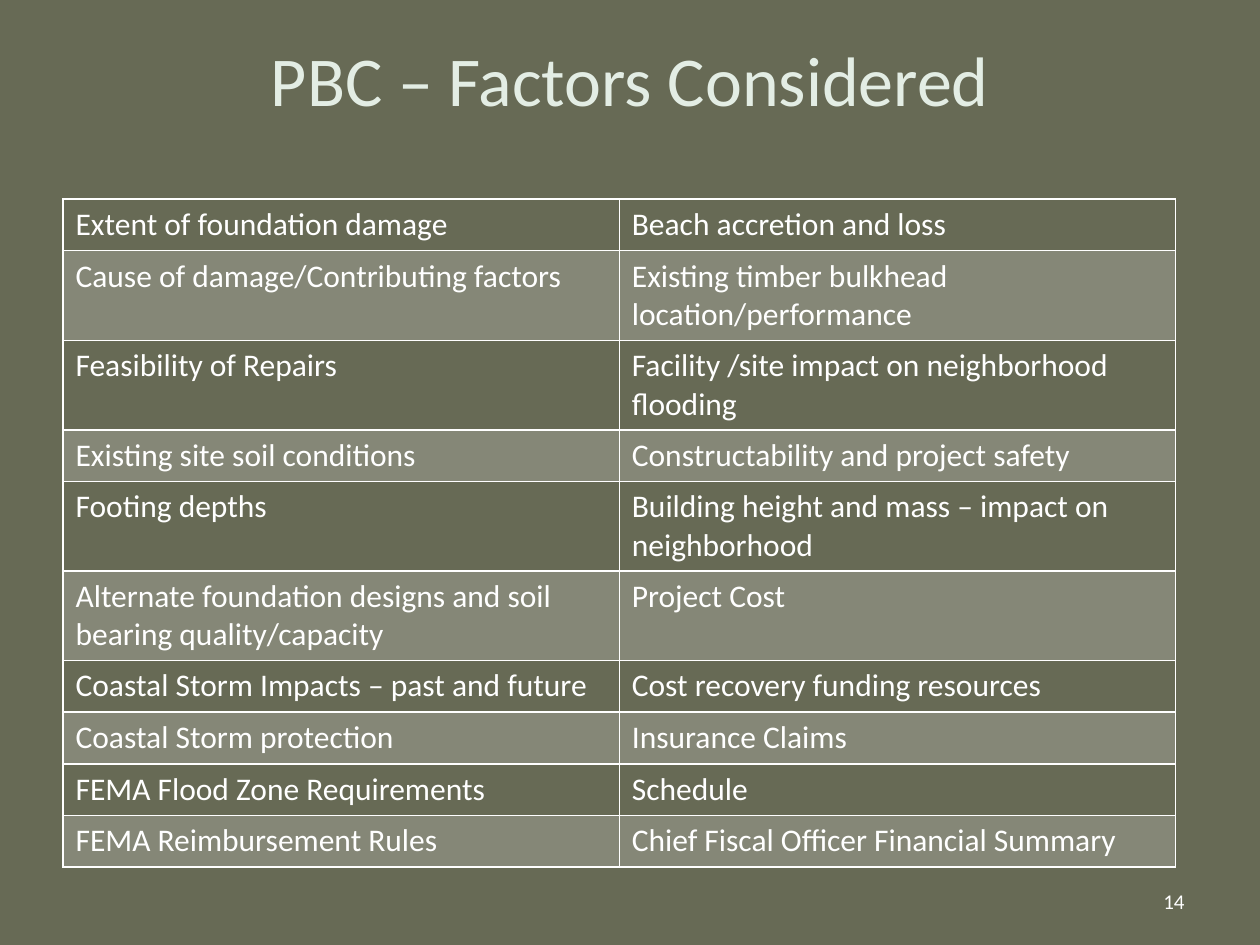
from typing import NamedTuple

from lxml import etree
from pptx import Presentation
from pptx.dml.color import RGBColor
from pptx.enum.text import MSO_ANCHOR, PP_ALIGN
from pptx.oxml.ns import qn
from pptx.util import Inches, Pt

MIDDLE = MSO_ANCHOR.MIDDLE
CENTER, RIGHT = PP_ALIGN.CENTER, PP_ALIGN.RIGHT
WHITE, OLIVE, PALE = "FFFFFF", "676A55", "E3EDE4"
FONT = "Calibri"
BAND_ALPHA = 20
BORDER_PT = 1


class Label(NamedTuple):
    text: str
    left: float
    top: float
    width: float
    height: float
    size: int
    color: str
    align: PP_ALIGN


class FactorRow(NamedTuple):
    left: str
    right: str


LABELS = [
    Label("14", 7.17, 6.95, 2.33, 0.4, 12, WHITE, RIGHT),
    Label("PBC – Factors Considered", 0, 0, 10, 1.25, 40, PALE, CENTER),
]

FACTORS = [
    FactorRow("Extent of foundation damage", "Beach accretion and loss"),
    FactorRow("Cause of damage/Contributing factors",
              "Existing timber bulkhead location/performance"),
    FactorRow("Feasibility of Repairs",
              "Facility /site impact on neighborhood flooding"),
    FactorRow("Existing site soil conditions",
              "Constructability and project safety"),
    FactorRow("Footing depths",
              "Building height and mass – impact on neighborhood"),
    FactorRow("Alternate foundation designs and soil bearing quality/capacity",
              "Project Cost"),
    FactorRow("Coastal Storm Impacts – past and future",
              "Cost recovery funding resources"),
    FactorRow("Coastal Storm protection", "Insurance Claims"),
    FactorRow("FEMA Flood Zone Requirements", "Schedule"),
    FactorRow("FEMA Reimbursement Rules",
              "Chief Fiscal Officer Financial Summary"),
]


def rgb(color: str) -> RGBColor:
    return RGBColor.from_string(color)


def write(tf, text: str, size: int, color: str, align=None) -> None:
    p = tf.paragraphs[0]
    p.alignment = align
    r = p.add_run()
    r.text = text
    for name, value in {"name": FONT, "size": Pt(size)}.items():
        setattr(r.font, name, value)
    r.font.color.rgb = rgb(color)


def add_label(s, label: Label) -> None:
    box = (label.left, label.top, label.width, label.height)
    sp = s.shapes.add_textbox(*map(Inches, box))
    tf = sp.text_frame
    for name, value in {"word_wrap": True, "vertical_anchor": MIDDLE}.items():
        setattr(tf, name, value)
    write(tf, label.text, label.size, label.color, label.align)


def add_borders(cell, color: str, width: float) -> None:
    tc_pr = cell._tc.get_or_add_tcPr()
    for i, side in enumerate(("lnL", "lnR", "lnT", "lnB")):
        ln = etree.Element(qn(f"a:{side}"), w=str(Pt(width)))
        fill = etree.SubElement(ln, qn("a:solidFill"))
        etree.SubElement(fill, qn("a:srgbClr"), val=color)
        tc_pr.insert(i, ln)


def fill_band(cell, color: str, alpha: int) -> None:
    cell.fill.solid()
    cell.fill.fore_color.rgb = rgb(color)
    clr = cell._tc.tcPr.find(f".//{qn('a:srgbClr')}")
    etree.SubElement(clr, qn("a:alpha"), val=str(alpha * 1000))


def add_factor_table(s, rows: list[FactorRow]) -> None:
    frame = s.shapes.add_table(len(rows), 2, Inches(0.5), Inches(1.58),
                               Inches(8.83), Inches(0.41 * len(rows)))
    table = frame.table
    table.first_row = False
    table.horz_banding = False
    for i, row in enumerate(rows):
        for j, text in enumerate(row):
            cell = table.cell(i, j)
            write(cell.text_frame, text, 18, WHITE)
            if i % 2:
                fill_band(cell, WHITE, BAND_ALPHA)
            else:
                cell.fill.background()
            add_borders(cell, WHITE, BORDER_PT)


def main() -> None:
    prs = Presentation()
    prs.slide_width, prs.slide_height = Inches(10), Inches(7.5)
    s = prs.slides.add_slide(prs.slide_layouts[6])
    s.background.fill.solid()
    s.background.fill.fore_color.rgb = rgb(OLIVE)
    add_factor_table(s, FACTORS)
    for label in LABELS:
        add_label(s, label)
    prs.save("out.pptx")


if __name__ == "__main__":
    main()
